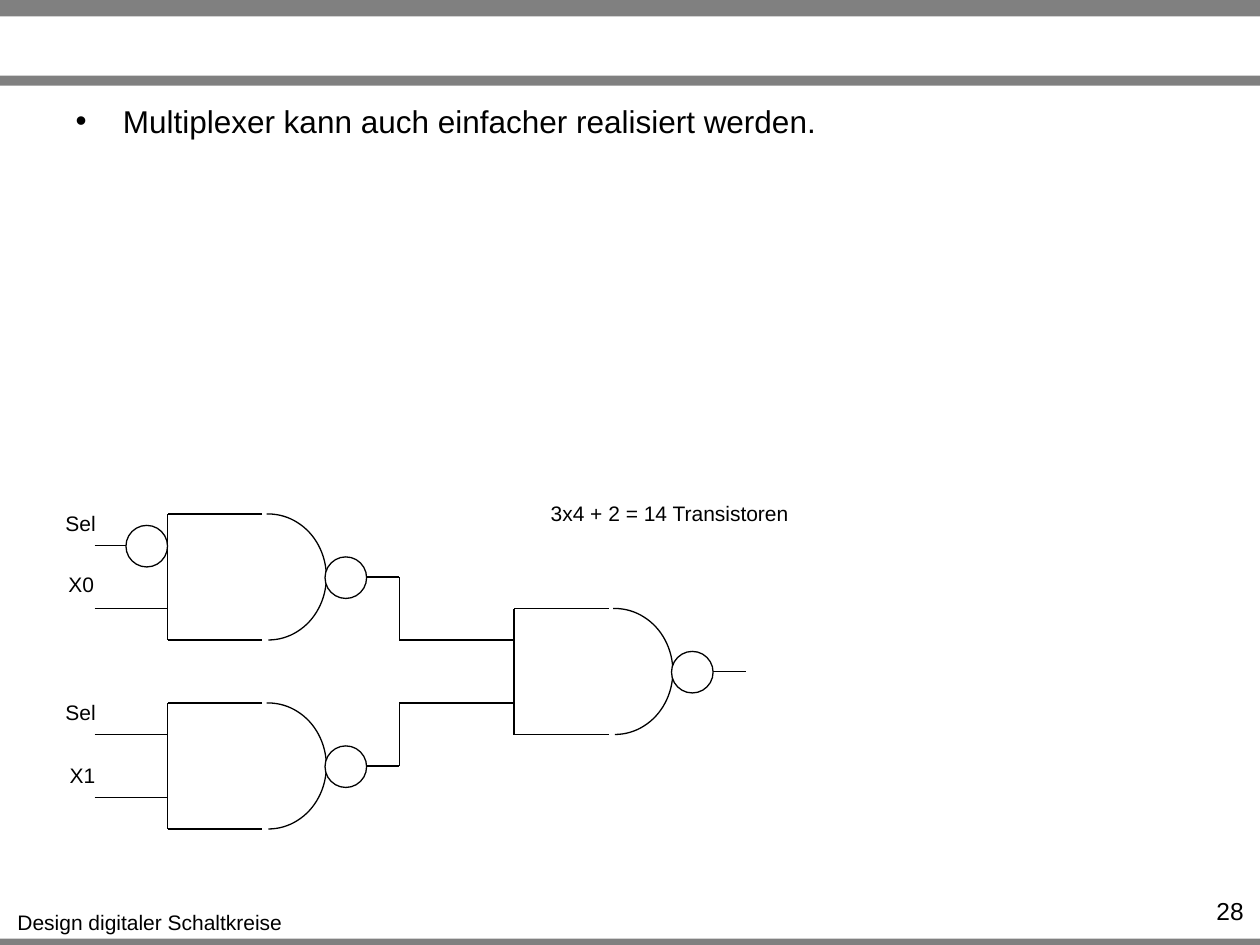
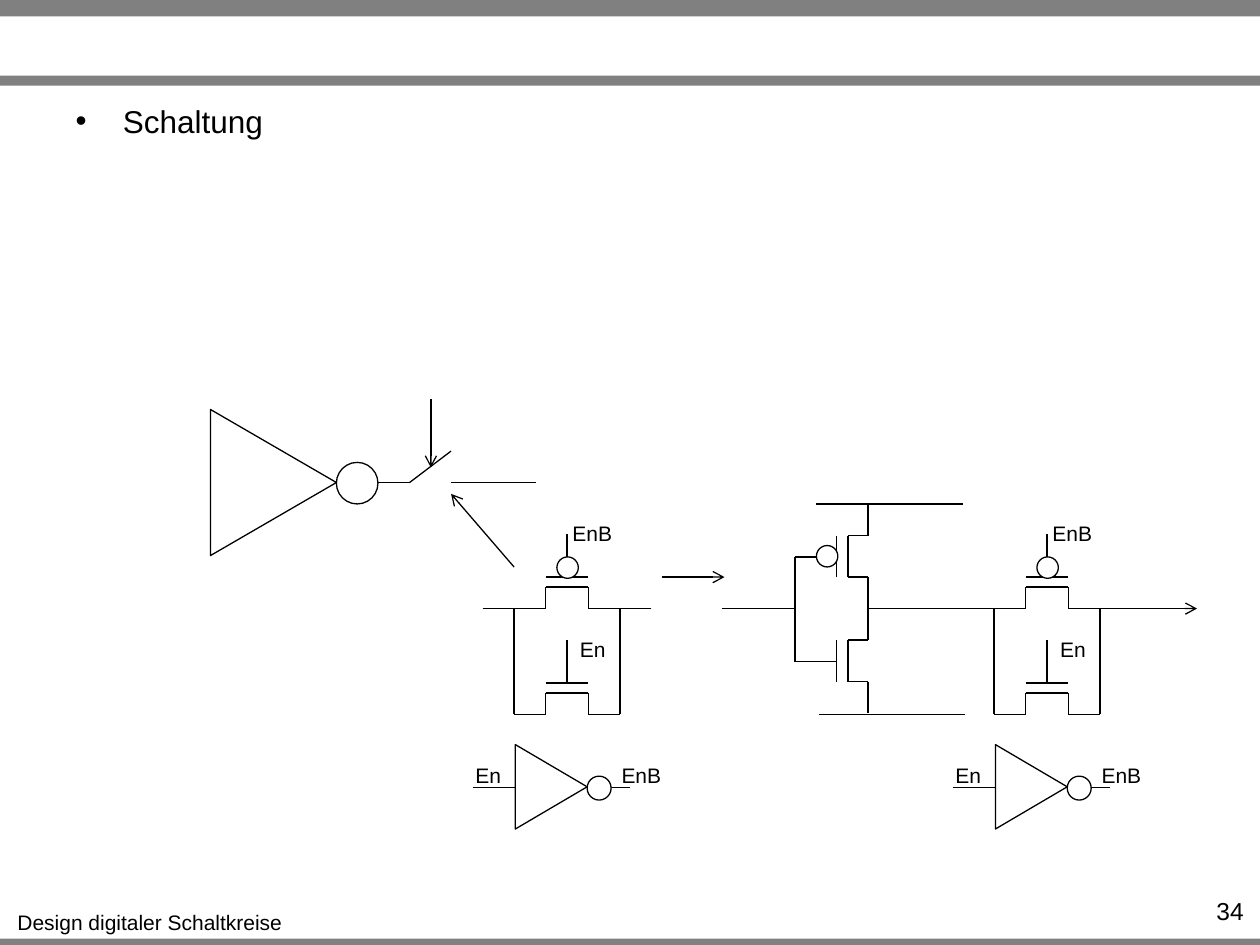
from itertools import pairwise

from lxml.etree import SubElement
from pptx import Presentation
from pptx.dml.color import RGBColor
from pptx.enum.shapes import MSO_CONNECTOR, MSO_SHAPE
from pptx.enum.text import MSO_AUTO_SIZE, PP_ALIGN
from pptx.oxml.ns import qn
from pptx.util import Inches, Pt

INK, PAPER, BAND = "000000", "FFFFFF", "808080"
FONT = "Arial"
LINE_WIDTH = Pt(0.75)
LABEL_HEIGHT = 0.3
FOOTER = "Design digitaler Schaltkreise"
BANDS = [(0, 0.13), (0.6, 0.08), (7.45, 0.05)]
BODY_FRAME = dict(left=0.5, top=0.76, width=9, height=0.74)
LABEL_FORMAT = dict(word_wrap=False, auto_size=MSO_AUTO_SIZE.SHAPE_TO_FIT_TEXT)
NUMBER_FORMAT = dict(word_wrap=True, auto_size=MSO_AUTO_SIZE.NONE)


def color(code):
    """Turn a hex string into a colour."""
    return RGBColor.from_string(code)


def apply_format(target, values):
    """Set each named attribute of the target."""
    for name, value in values.items():
        setattr(target, name, value)


def write(frame, text, size, align):
    """Put one formatted paragraph into a text frame."""
    paragraph = frame.paragraphs[0]
    paragraph.text = text
    apply_format(paragraph, dict(alignment=align, space_before=Pt(0)))
    apply_format(paragraph.font, dict(name=FONT, size=Pt(size)))
    paragraph.font.color.rgb = color(INK)


def add_text(shapes, text, at, size=12, align=PP_ALIGN.CENTER, frame_format=LABEL_FORMAT):
    """Add a text box."""
    frame = shapes.add_textbox(*map(Inches, at)).text_frame
    apply_format(frame, frame_format)
    write(frame, text, size, align)


def label(shapes, text, left, top, width):
    """Add a small centred label that does not wrap."""
    add_text(shapes, text, (left, top, width, LABEL_HEIGHT))


def outline(shapes, preset, at, fill=None):
    """Add a thinly outlined preset shape."""
    part = shapes.add_shape(preset, *map(Inches, at))
    part.shadow.inherit = False
    if fill:
        part.fill.solid()
        part.fill.fore_color.rgb = color(fill)
    else:
        part.fill.background()
    part.line.color.rgb = color(INK)
    part.line.width = LINE_WIDTH
    return part


def bubble(shapes, left, top, size):
    """Add an inversion circle."""
    outline(shapes, MSO_SHAPE.OVAL, (left, top, size, size), PAPER)


def triangle(shapes, *at):
    """Add an inverter triangle that points right."""
    outline(shapes, MSO_SHAPE.ISOSCELES_TRIANGLE, at).rotation = 90


def wire(shapes, *points, arrow=False):
    """Run straight lines through the points, each with an optional arrowhead."""
    for start, end in pairwise(points):
        segment = shapes.add_connector(MSO_CONNECTOR.STRAIGHT, *map(Inches, start + end))
        segment.line.color.rgb = color(INK)
        segment.line.width = LINE_WIDTH
        properties = segment.element.spPr
        if arrow:
            SubElement(properties.find(qn("a:ln")), qn("a:tailEnd"), type="arrow")
        SubElement(properties, qn("a:effectLst"))


def nand_gate(shapes, x, y):
    """Draw a NAND gate with its two inputs and its output."""
    for pin in (0.25, 0.75):
        wire(shapes, (x - 0.58, y + pin), (x, y + pin))
    wire(shapes, (x + 0.75, y), (x, y), (x, y + 1), (x + 0.75, y + 1))
    curve = outline(shapes, MSO_SHAPE.ARC, (x + 0.34, y, 0.92, 1))
    curve.adjustments[0], curve.adjustments[1] = 161.1, 54
    wire(shapes, (x + 1.25, y + 0.5), (x + 1.84, y + 0.5))
    bubble(shapes, x + 1.25, y + 0.34, 0.33)


def lying_transistor(shapes, x, y):
    """Draw a transistor with a horizontal channel and its gate above."""
    parts = shapes.add_group_shape().shapes
    source, drain, middle = x + 0.25, x + 0.59, x + 0.42
    wire(parts, (x, y), (source, y), (source, y - 0.17), (drain, y - 0.17),
         (drain, y), (x + 0.84, y))
    wire(parts, (source, y - 0.25), (drain, y - 0.25))
    wire(parts, (middle, y - 0.25), (middle, y - 0.59))


def standing_transistor(shapes, x, y, inverted=False):
    """Draw a transistor with a vertical channel and its gate on the left."""
    parts = shapes.add_group_shape().shapes
    channel, plate, rail = x + 0.42, x + 0.33, x + 0.58
    upper, lower, middle = y + 0.25, y + 0.58, y + 0.42
    wire(parts, (rail, y), (rail, upper), (channel, upper), (channel, lower),
         (rail, lower), (rail, y + 0.83))
    wire(parts, (plate, upper), (plate, lower))
    wire(parts, (x, middle), (plate, middle))
    if inverted:
        bubble(parts, x + 0.17, y + 0.33, 0.17)


def transmission_gate(shapes, x, top=4.83, bottom=5.67):
    """Draw two parallel transistors controlled by En and EnB."""
    right = x + 0.84
    for y in (top, bottom):
        lying_transistor(shapes, x, y)
    bubble(shapes, x + 0.34, top - 0.41, 0.17)
    for side, lead in ((x, x - 0.25), (right, right + 0.25)):
        wire(shapes, (lead, top), (side, top), (side, bottom))
    label(shapes, "EnB", x + 0.36, 4.08, 0.52)
    label(shapes, "En", x + 0.42, 5, 0.41)


def enable_inverter(shapes, x, y=6.25):
    """Draw the small inverter that makes EnB from En."""
    parts = shapes.add_group_shape().shapes
    wire(parts, (x + 0.91, y), (x + 1.25, y))
    bubble(parts, x + 0.91, y - 0.09, 0.19)
    triangle(parts, x + 0.29, y - 0.29, 0.67, 0.57)
    wire(parts, (x, y), (x + 0.34, y))
    label(shapes, "En", x - 0.08, y - 0.25, 0.41)
    label(shapes, "EnB", x + 1.08, y - 0.25, 0.52)


def add_page(deck, statement, number):
    """Add a slide with bands, footer, page number and one bullet."""
    page = deck.slides.add_slide(deck.slide_layouts[1])
    shapes = page.shapes
    title = shapes.title.element
    title.getparent().remove(title)
    body = page.placeholders[1]
    apply_format(body, {side: Inches(length) for side, length in BODY_FRAME.items()})
    body.text_frame.auto_size = MSO_AUTO_SIZE.NONE
    write(body.text_frame, statement, 18, PP_ALIGN.LEFT)
    for top, height in BANDS:
        band = outline(shapes, MSO_SHAPE.RECTANGLE, (0, top, 10, height), BAND)
        band.line.fill.background()
    label(shapes, FOOTER, 0.03, 7.17, 2.32)
    add_text(shapes, number, (9.1, 7.06, 0.87, 0.24), 14, PP_ALIGN.RIGHT, NUMBER_FORMAT)
    return shapes


def draw_multiplexer(shapes):
    """Draw the multiplexer made of three NAND gates."""
    for x, y in ((1.33, 4.08), (1.33, 5.58), (4.08, 4.83)):
        nand_gate(shapes, x, y)
    bubble(shapes, 1, 4.17, 0.33)
    for output, entry in ((4.58, 5.08), (6.08, 5.58)):
        wire(shapes, (3.17, output), (3.17, entry), (3.5, entry))
    for y in (4, 5.5):
        label(shapes, "Sel", 0.42, y, 0.44)
    label(shapes, "X0", 0.44, 4.49, 0.41)
    label(shapes, "X1", 0.45, 6, 0.41)
    label(shapes, "3x4 + 2 = 14 Transistoren", 4.24, 3.92, 2.15)


def draw_switched_inverter(shapes):
    """Draw the inverter followed by an open switch."""
    wire(shapes, (2.67, 3.83), (3.25, 3.83), (3.58, 3.58))
    bubble(shapes, 2.67, 3.67, 0.33)
    triangle(shapes, 1.59, 3.33, 1.16, 1)
    wire(shapes, (3.58, 3.83), (4.25, 3.83))
    for start, end in (((3.42, 3.17), (3.42, 3.71)), ((4.08, 4.5), (3.58, 3.92)),
                       ((5.25, 4.58), (5.75, 4.58))):
        wire(shapes, start, end, arrow=True)


def draw_cmos_inverter(shapes):
    """Draw the transistor inverter between its supply rails."""
    for left, y in ((6.48, 4), (6.5, 5.67)):
        wire(shapes, (left, y), (left + 1.16, y))
    standing_transistor(shapes, 6.31, 4, inverted=True)
    standing_transistor(shapes, 6.31, 4.83)
    wire(shapes, (6.31, 4.42), (6.31, 5.25))
    wire(shapes, (5.73, 4.83), (6.31, 4.83))
    wire(shapes, (6.89, 4.83), (7.67, 4.83))
    wire(shapes, (8.5, 4.83), (9.5, 4.83), arrow=True)


def main():
    """Build both slides and save the deck."""
    deck = Presentation()
    apply_format(deck, dict(slide_width=Inches(10), slide_height=Inches(7.5)))
    draw_multiplexer(add_page(deck, "Multiplexer kann auch einfacher realisiert werden.", "28"))
    circuit = add_page(deck, "Schaltung", "34")
    draw_switched_inverter(circuit)
    draw_cmos_inverter(circuit)
    for x in (4.08, 7.89):
        transmission_gate(circuit, x)
        enable_inverter(circuit, x - 0.33)
    deck.save("out.pptx")


if __name__ == "__main__":
    main()
